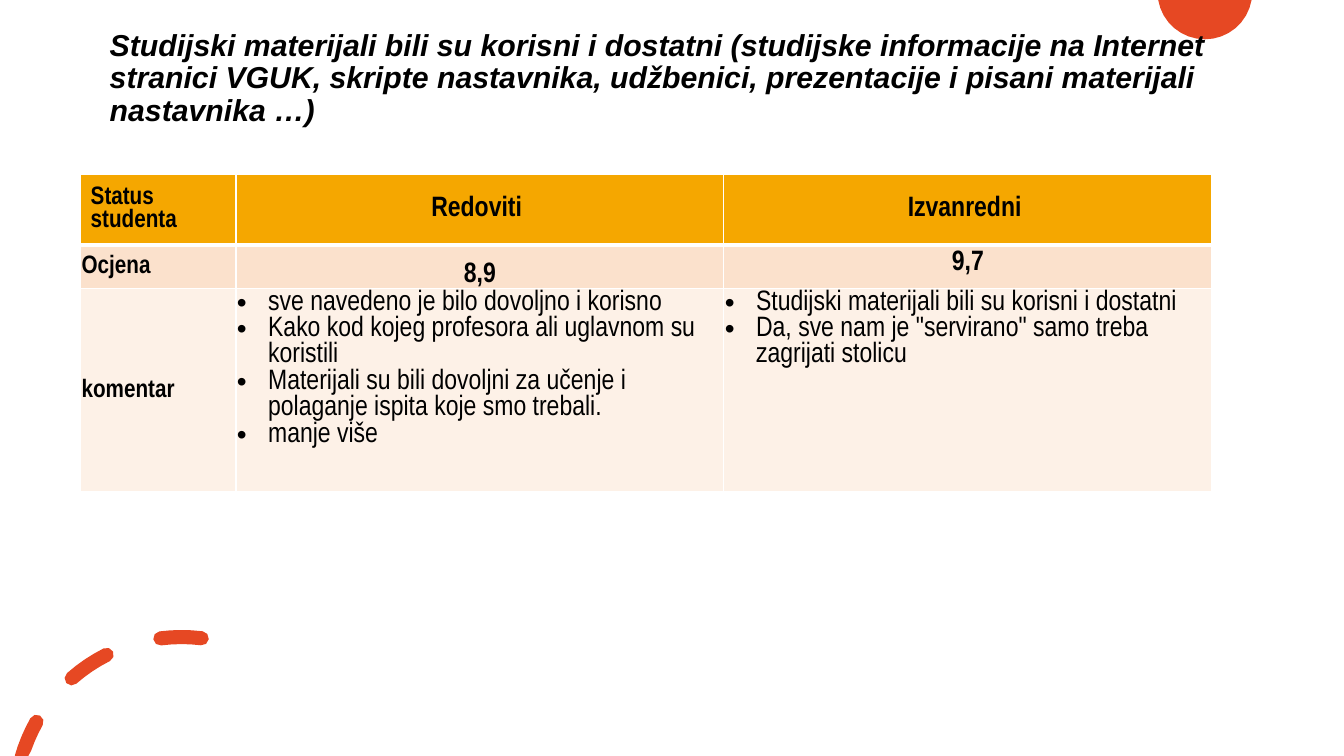
import math

from lxml import etree
from pptx import Presentation
from pptx import util as u
from pptx.dml.color import RGBColor
from pptx.enum import text
from pptx.oxml.ns import qn

SLIDE_WIDTH, SLIDE_HEIGHT = 13.33, 7.5
ACCENT, INK, GRID = "E64823", "000000", "FFFFFF"
HEADER, RATING, COMMENT = "F5A700", "FBE1CC", "FDF1E7"
LEFT, CENTER = text.PP_ALIGN.LEFT, text.PP_ALIGN.CENTER
TOP, MIDDLE, BOTTOM = text.MSO_ANCHOR.TOP, text.MSO_ANCHOR.MIDDLE, text.MSO_ANCHOR.BOTTOM

QUESTION = (
    "Studijski materijali bili su korisni i dostatni (studijske informacije na Internet "
    "stranici VGUK, skripte nastavnika, udžbenici, prezentacije i pisani materijali nastavnika …)"
)
REGULAR_COMMENTS = [
    "sve navedeno je bilo dovoljno i korisno",
    "Kako kod kojeg profesora ali uglavnom su koristili",
    "Materijali su bili dovoljni za učenje i polaganje ispita koje smo trebali.",
    "manje više",
]
PART_TIME_COMMENTS = [
    "Studijski materijali bili su korisni i dostatni",
    'Da, sve nam je "servirano" samo treba zagrijati stolicu',
]


def color(value):
    return RGBColor.from_string(value)


def style_runs(paragraph, font_name, size, bold=True, italic=False):
    for run in paragraph.runs:
        run.font.name = font_name
        run.font.size = u.Pt(size)
        run.font.bold = bold
        run.font.italic = italic
        run.font.color.rgb = color(INK)


def arc(center_x, center_y, radius, start, end, steps=4):
    angles = [math.radians(start + (end - start) * i / steps) for i in range(steps + 1)]
    return [(center_x + radius * math.cos(a), center_y - radius * math.sin(a)) for a in angles]


def draw_outline(slide, contours):
    visible = [
        [(u.Inches(x), u.Inches(min(max(y, 0), SLIDE_HEIGHT))) for x, y in contour]
        for contour in contours
    ]
    builder = slide.shapes.build_freeform(*visible[0][0])
    for index, contour in enumerate(visible):
        if index:
            builder.move_to(*contour[0])
        builder.add_line_segments(contour[1:], close=True)
    outline = builder.convert_to_shape()
    outline.shadow.inherit = False
    outline.fill.solid()
    outline.fill.fore_color.rgb = color(ACCENT)
    outline.line.fill.background()


def add_corner_disc(slide, center_x, center_y, radius):
    rim = math.degrees(math.asin(-center_y / radius))
    draw_outline(slide, [arc(center_x, center_y, radius, 180 + rim, 360 - rim, 16)])


def add_dashed_arc(slide, center_x, center_y, radius, half_width, spans):
    dashes = []
    for start, end in spans:
        start_center = arc(center_x, center_y, radius, start, start, 1)[0]
        end_center = arc(center_x, center_y, radius, end, end, 1)[0]
        dashes.append(
            arc(center_x, center_y, radius + half_width, start, end)
            + arc(*end_center, half_width, end, end - 180)
            + arc(center_x, center_y, radius - half_width, end, start)
            + arc(*start_center, half_width, start + 180, start)
        )
    draw_outline(slide, dashes)


def add_question(slide, left, top, width, height):
    question = slide.shapes.add_textbox(*map(u.Inches, (left, top, width, height)))
    frame = question.text_frame
    frame.word_wrap = True
    frame.vertical_anchor = MIDDLE
    frame.text = QUESTION
    frame.paragraphs[0].line_spacing = 0.9
    style_runs(frame.paragraphs[0], "Arial", 21.6, italic=True)


def add_bullet(paragraph):
    properties = paragraph._p.get_or_add_pPr()
    properties.set("marL", str(u.Inches(0.31)))
    properties.set("indent", str(u.Inches(-0.31)))
    etree.SubElement(properties, qn("a:buFont")).set("typeface", "Arial")
    etree.SubElement(properties, qn("a:buChar")).set("char", "•")


def add_borders(cell):
    properties = cell._tc.get_or_add_tcPr()
    for index, (side, width) in enumerate([("L", 1), ("R", 1), ("T", 1), ("B", 3)]):
        border = etree.Element(qn(f"a:ln{side}"), w=str(u.Pt(width)))
        fill = etree.SubElement(border, qn("a:solidFill"))
        etree.SubElement(fill, qn("a:srgbClr")).set("val", GRID)
        properties.insert(index, border)


def fill_cell(cell, lines, fill, size, align=LEFT, anchor=MIDDLE, tight=True, bulleted=False):
    cell.fill.solid()
    cell.fill.fore_color.rgb = color(fill)
    cell.vertical_anchor = anchor
    if tight:
        cell.margin_left = cell.margin_top = cell.margin_right = u.Inches(0.01)
        cell.margin_bottom = 0
    cell.text_frame.text = "\n".join(lines)
    for paragraph in cell.text_frame.paragraphs:
        paragraph.alignment = align
        style_runs(paragraph, "Arial Narrow", size, bold=not bulleted)
        if bulleted:
            add_bullet(paragraph)


def add_survey_table(slide, left, top, height, column_widths, row_heights):
    box = (left, top, sum(column_widths), height)
    survey_frame = slide.shapes.add_table(
        len(row_heights), len(column_widths), *map(u.Inches, box)
    )
    survey = survey_frame.table
    for column, width in zip(survey.columns, column_widths):
        column.width = u.Inches(width)
    for row, row_height in zip(survey.rows, row_heights):
        row.height = u.Inches(row_height)
    survey_frame.height = u.Inches(height)

    fill_cell(survey.cell(0, 0), ["Status studenta"], HEADER, 18, tight=False)
    fill_cell(survey.cell(1, 0), ["Ocjena"], RATING, 18)
    fill_cell(survey.cell(2, 0), ["komentar"], COMMENT, 18)
    for column, status in enumerate(["Redoviti ", "Izvanredni "], 1):
        fill_cell(survey.cell(0, column), [status], HEADER, 20, CENTER, tight=False)
    fill_cell(survey.cell(1, 1), ["8,9"], RATING, 20, CENTER, BOTTOM)
    fill_cell(survey.cell(1, 2), ["9,7"], RATING, 20, CENTER, TOP, tight=False)
    for column, comments in enumerate([REGULAR_COMMENTS, PART_TIME_COMMENTS], 1):
        fill_cell(survey.cell(2, column), comments, COMMENT, 20, anchor=TOP, bulleted=True)
    for column in range(len(column_widths)):
        add_borders(survey.cell(0, column))


def main():
    deck = Presentation()
    deck.slide_width = u.Inches(SLIDE_WIDTH)
    deck.slide_height = u.Inches(SLIDE_HEIGHT)
    slide = deck.slides.add_slide(deck.slide_layouts[6])
    add_corner_disc(slide, 11.95, -0.08, 0.47)
    add_dashed_arc(slide, 1.8, 7.97, 1.65, 0.07, [(164, 150.6), (131.3, 116.7), (97.3, 83)])
    add_question(slide, 0.99, 0.22, 11.5, 1.13)
    add_survey_table(slide, 0.8, 1.73, 3.14, [1.54, 4.84, 4.84], [0.26, 0.41, 0.81])
    deck.save("out.pptx")


if __name__ == "__main__":
    main()
